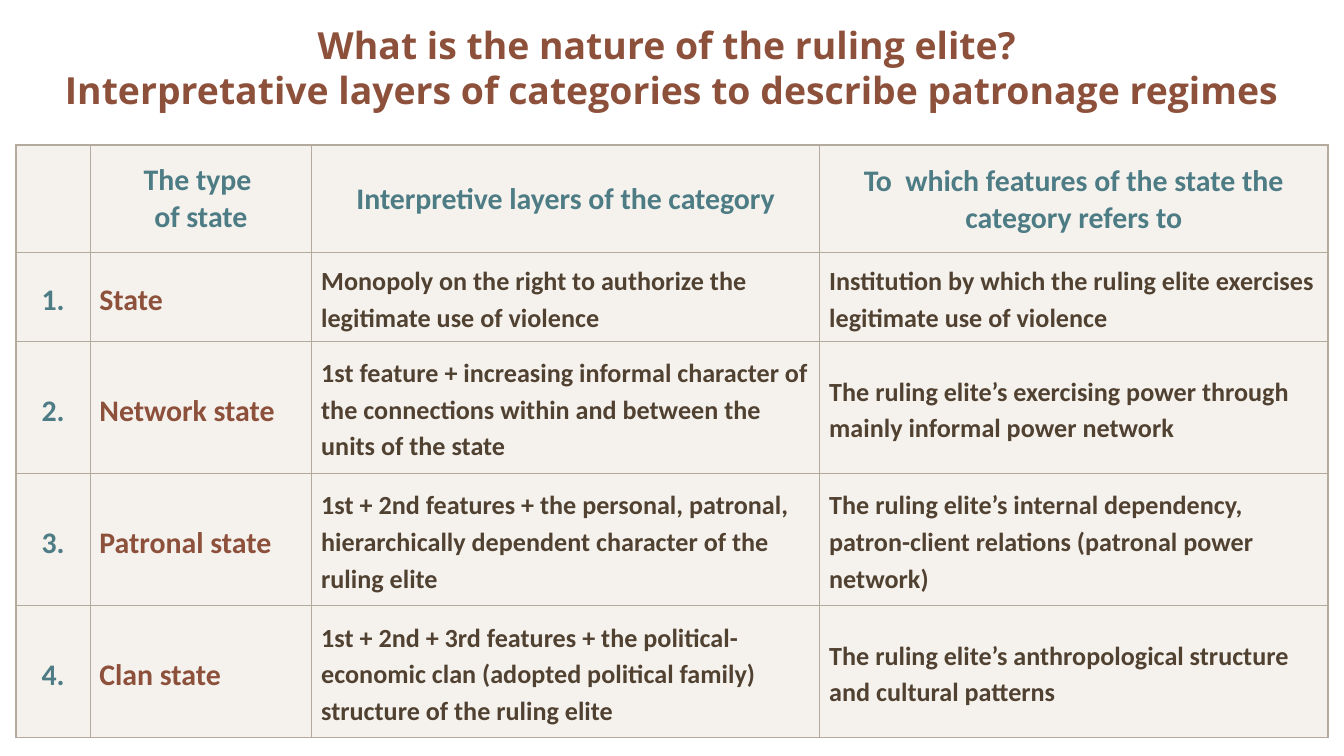
from lxml import etree
from pptx import Presentation
from pptx.dml.color import RGBColor
from pptx.enum.text import MSO_ANCHOR, PP_ALIGN
from pptx.oxml.ns import qn
from pptx.util import Inches, Pt

MIDDLE = MSO_ANCHOR.MIDDLE
CENTER, LEFT = PP_ALIGN.CENTER, PP_ALIGN.LEFT

COLORS = {
    "brown": "8D503B",
    "teal": "4D7C85",
    "body": "504131",
    "rule": "B3A99D",
    "cell": "EFEAE4",
}
TITLE = [
    "What is the nature of the ruling elite? ",
    "Interpretative layers of categories to describe patronage regimes",
]
HEADINGS = [
    [],
    ["The type ", "of state"],
    ["Interpretive layers of the category"],
    ["To  which features of the state the category refers to"],
]
STATES = [
    ("State",
     "Monopoly on the right to authorize the legitimate use of violence",
     "Institution by which the ruling elite exercises legitimate use of violence"),
    ("Network state",
     "1st feature + increasing informal character of the connections within "
     "and between the units of the state",
     "The ruling elite’s exercising power through mainly informal power network"),
    ("Patronal state",
     "1st + 2nd features + the personal, patronal, hierarchically dependent "
     "character of the ruling elite",
     "The ruling elite’s internal dependency, patron-client relations "
     "(patronal power network)"),
    ("Clan state",
     "1st + 2nd + 3rd features + the political-economic clan (adopted political "
     "family) structure of the ruling elite",
     "The ruling elite’s anthropological structure and cultural patterns"),
]
TABLE_HEIGHT = 4.41
HEADING_HEIGHT, SHORT_HEIGHT = 0.8, 0.66
TALL_HEIGHT = (TABLE_HEIGHT - HEADING_HEIGHT - SHORT_HEIGHT) / 3
ROW_HEIGHTS = [HEADING_HEIGHT, SHORT_HEIGHT] + [TALL_HEIGHT] * 3
COLUMN_WIDTHS = [0.55, 1.65, 3.78, 3.78]
COLUMN_STYLES = [
    (16, "teal", CENTER),
    (16, "brown", LEFT),
    (14, "body", LEFT),
    (14, "body", LEFT),
]
CELL_MARGINS = (0.07, 0.01, 0.07, 0)
TYPE_HEADING_MARGINS = (0.05, 0.05, 0.05, 0.05)


def write_lines(frame, lines, font, size, color, align, spacing):
    for index, line in enumerate(lines):
        paragraph = frame.add_paragraph() if index else frame.paragraphs[0]
        paragraph.alignment = align
        paragraph.line_spacing = spacing
        run = paragraph.add_run()
        run.text = line
        run.font.name = font
        run.font.size = Pt(size)
        run.font.bold = True
        run.font.color.rgb = RGBColor.from_string(COLORS[color])


def add_title(slide):
    title = slide.shapes.add_textbox(Inches(0.12), 0, Inches(9.76), Inches(1))
    frame = title.text_frame
    frame.word_wrap = True
    frame.vertical_anchor = MIDDLE
    write_lines(frame, TITLE, "Open Sans", 20, "brown", CENTER, 1.0)


def add_border(cell, side, width):
    border = etree.SubElement(cell._tc.get_or_add_tcPr(), qn(f"a:ln{side}"), w=str(Pt(width)))
    fill = etree.SubElement(border, qn("a:solidFill"))
    etree.SubElement(fill, qn("a:srgbClr"), val=COLORS["rule"])


def style_cell(cell, row, column):
    outer_sides = {
        "L": column == 0,
        "R": column == len(COLUMN_WIDTHS) - 1,
        "T": row == 0,
        "B": row == len(ROW_HEIGHTS) - 1,
    }
    for side, is_outer in outer_sides.items():
        add_border(cell, side, 1 if is_outer else 0.5)
    cell.fill.solid()
    cell.fill.fore_color.rgb = RGBColor.from_string(COLORS["cell"])
    tint = cell._tc.tcPr.find(qn("a:solidFill")).find(qn("a:srgbClr"))
    etree.SubElement(tint, qn("a:alpha"), val="60000")
    cell.vertical_anchor = MIDDLE
    margins = TYPE_HEADING_MARGINS if (row, column) == (0, 1) else CELL_MARGINS
    left, top, right, bottom = map(Inches, margins)
    cell.margin_left, cell.margin_top = left, top
    cell.margin_right, cell.margin_bottom = right, bottom


def add_state_table(slide):
    table = slide.shapes.add_table(
        len(ROW_HEIGHTS), len(COLUMN_WIDTHS), Inches(0.12), Inches(1.08),
        Inches(sum(COLUMN_WIDTHS)), Inches(TABLE_HEIGHT)).table
    table.horz_banding = False
    for column, width in zip(table.columns, COLUMN_WIDTHS):
        column.width = Inches(width)
    for row, height in zip(table.rows, ROW_HEIGHTS):
        row.height = Inches(height)

    for column, heading in enumerate(HEADINGS):
        cell = table.cell(0, column)
        style_cell(cell, 0, column)
        write_lines(cell.text_frame, heading, "Calibri", 16, "teal", CENTER, 1.0)

    for row, state in enumerate(STATES, start=1):
        for column, text in enumerate((f"{row}.", *state)):
            cell = table.cell(row, column)
            style_cell(cell, row, column)
            size, color, align = COLUMN_STYLES[column]
            write_lines(cell.text_frame, [text], "Calibri", size, color, align, 1.15)


def main():
    deck = Presentation()
    deck.slide_width = Inches(10)
    deck.slide_height = deck.slide_width * 9 // 16
    slide = deck.slides.add_slide(deck.slide_layouts[6])
    add_title(slide)
    add_state_table(slide)
    deck.save("out.pptx")


if __name__ == "__main__":
    main()
